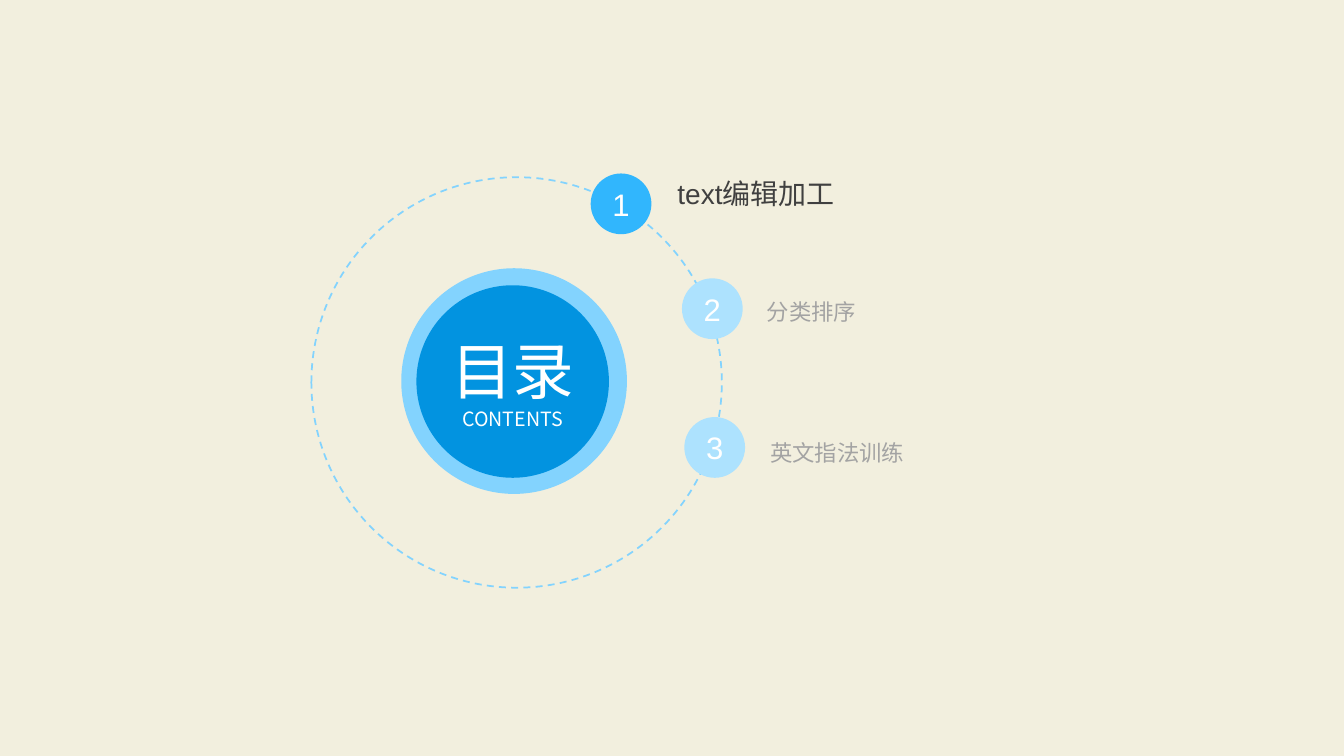
import pptx
import pptx.dml.color
import pptx.enum.dml
import pptx.enum.shapes
import pptx.enum.text
import pptx.oxml.ns
import pptx.util
from lxml import etree

Pt = pptx.util.Pt
ALIGN = pptx.enum.text.PP_ALIGN
COLOURS = {
    "paper": "F2EFDE", "halo": "83D3FE", "disc": "0293E0",
    "active": "31B6FD", "idle": "ADE2FE",
    "white": "FFFFFF", "dark": "404040", "grey": "A3A3A3",
}
LATIN, CJK = "Arial", "Noto Sans CJK SC"

TITLE = [("目录", 44), ("CONTENTS", 14)]
# centre x, centre y, diameter
HALO = (367.2, 272.2, 161.2)
RING = (369, 273.2, 293.2)
DISC = (366.2, 272.5, 137.5)
BADGE_SIZE = 43.4
BADGE_FONT = 22.2
LABEL_HEIGHT = 60.5
# text, badge centre, label left, label centre y, label width, size, colours
ITEMS = [
    ("text编辑加工", (443.6, 145.6), 481, 135.4, 281.5, 20, "active", "dark"),
    ("分类排序", (508.8, 220.5), 545, 220.3, 234.7, 16, "idle", "grey"),
    ("英文指法训练", (510.5, 319.6), 547.2, 321.1, 237.6, 16, "idle", "grey"),
]


def rgb(name):
    return pptx.dml.color.RGBColor.from_string(COLOURS[name])


def add_circle(page, centre_x, centre_y, size, fill=None, line=None):
    circle = page.shapes.add_shape(
        pptx.enum.shapes.MSO_SHAPE.OVAL,
        Pt(centre_x - size / 2), Pt(centre_y - size / 2), Pt(size), Pt(size))
    circle.shadow.inherit = False
    if fill:
        circle.fill.solid()
        circle.fill.fore_color.rgb = rgb(fill)
    else:
        circle.fill.background()
    if line:
        circle.line.color.rgb = rgb(line)
        circle.line.width = Pt(1.25)
        circle.line.dash_style = pptx.enum.dml.MSO_LINE.DASH
    else:
        circle.line.fill.background()
    return circle


def write(box, lines, colour, font, align, spacing=1.0, left_inset=0, wrap=True):
    """Fill a box with (text, size) lines, one paragraph each."""
    frame = box.text_frame
    frame_format = {
        "word_wrap": wrap,
        "auto_size": pptx.enum.text.MSO_AUTO_SIZE.NONE,
        "vertical_anchor": pptx.enum.text.MSO_ANCHOR.MIDDLE,
        "margin_left": Pt(left_inset), "margin_right": 0,
        "margin_top": 0, "margin_bottom": 0,
    }
    for name, value in frame_format.items():
        setattr(frame, name, value)
    for index, (text, size) in enumerate(lines):
        para = frame.add_paragraph() if index else frame.paragraphs[0]
        para.alignment, para.line_spacing = align, spacing
        span = para.add_run()
        span.text = text
        span.font.name, span.font.size = font, Pt(size)
        span.font.color.rgb = rgb(colour)
        east_asian = etree.SubElement(
            span.font._element, pptx.oxml.ns.qn("a:ea"))
        east_asian.set("typeface", CJK)


def main():
    deck = pptx.Presentation()
    deck.slide_width, deck.slide_height = Pt(960), Pt(540)
    page = deck.slides.add_slide(deck.slide_layouts[5])
    page.background.fill.solid()
    page.background.fill.fore_color.rgb = rgb("paper")

    add_circle(page, *HALO, fill="halo")
    add_circle(page, *RING, line="halo")
    disc = add_circle(page, *DISC, fill="disc")

    title = page.shapes.title
    for side in ("left", "top", "width", "height"):
        setattr(title, side, getattr(disc, side))
    write(title, TITLE, "white", CJK, ALIGN.CENTER)
    disc._element.addnext(title._element)

    for number, item in enumerate(ITEMS, 1):
        text, centre, left, middle, width, size, fill, colour = item
        label = page.shapes.add_textbox(
            Pt(left), Pt(middle - LABEL_HEIGHT / 2), Pt(width), Pt(LABEL_HEIGHT))
        write(label, [(text, size)], colour, LATIN, ALIGN.LEFT, 1.2, 2.9)
        badge = add_circle(page, *centre, BADGE_SIZE, fill=fill)
        write(badge, [(str(number), BADGE_FONT)], "white", LATIN,
              ALIGN.CENTER, wrap=False)

    deck.save("out.pptx")


if __name__ == "__main__":
    main()
